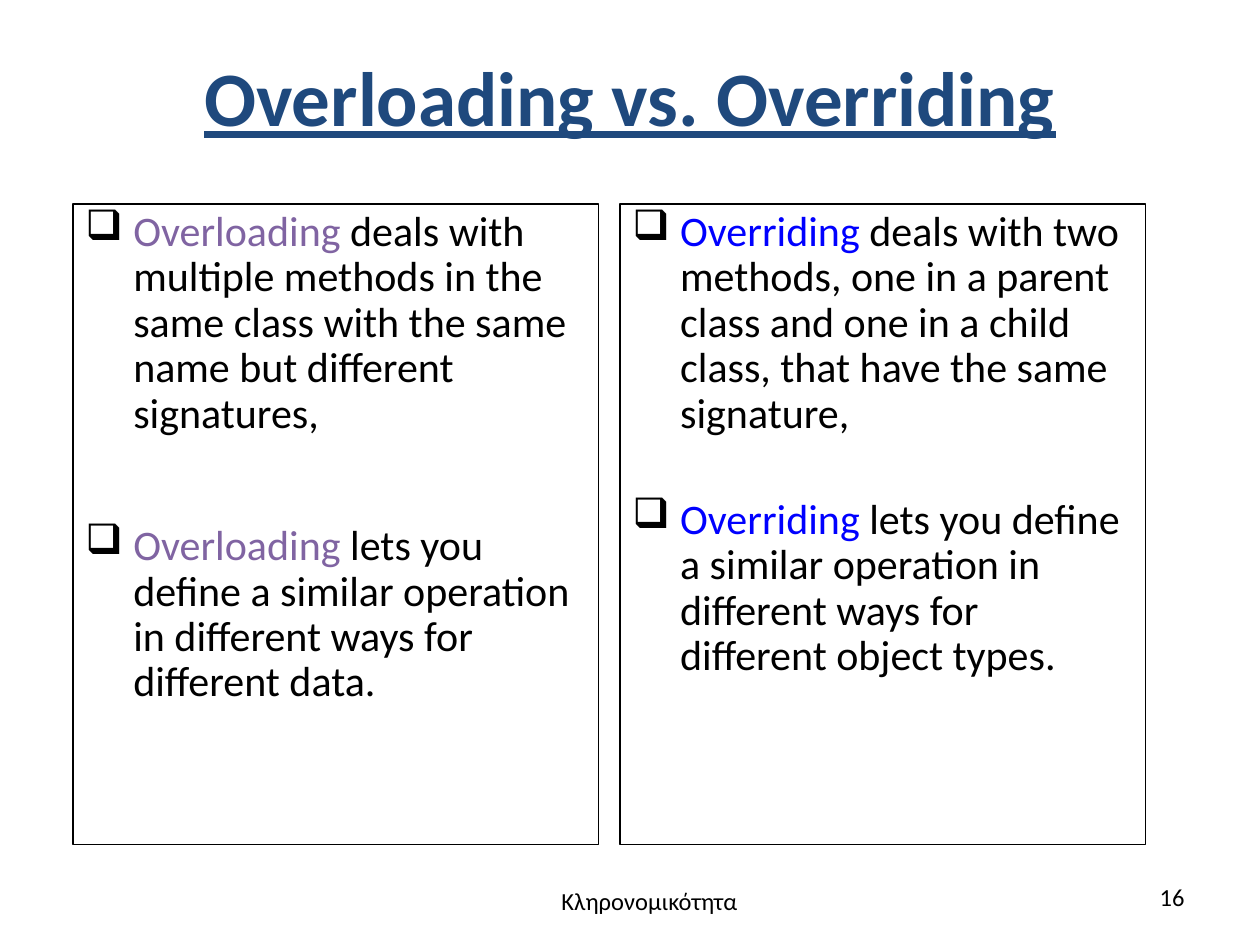
from lxml import etree
from pptx import Presentation
from pptx import util as u
from pptx.dml import color
from pptx.enum import shapes, text
from pptx.oxml import ns


def rgb(code):
    return color.RGBColor.from_string(code)


class Deck:
    font = "Calibri"
    ink = "000000"
    navy = "1F497D"

    def __init__(self):
        self.prs = Presentation()
        self.prs.slide_width = u.Inches(10)
        self.prs.slide_height = u.Inches(7.5)
        self.slide = self.prs.slides.add_slide(self.prs.slide_layouts[5])

    def run(self, para, words, size, shade=None):
        run = para.add_run()
        run.text = words
        run.font.name = self.font
        run.font.size = u.Pt(size)
        run.font.color.rgb = rgb(shade or self.ink)
        return run

    def title(self, words, box):
        shape = self.slide.shapes.title
        shape.left, shape.top, shape.width, shape.height = map(u.Inches, box)
        frame = shape.text_frame
        frame.vertical_anchor = text.MSO_ANCHOR.MIDDLE
        para = frame.paragraphs[0]
        para.alignment = text.PP_ALIGN.CENTER
        run = self.run(para, words, 44, self.navy)
        run.font.bold = True
        run.font.underline = True

    def bullet(self, para):
        props = para._p.get_or_add_pPr()
        props.set("marL", str(u.Inches(0.38)))
        props.set("indent", str(-u.Inches(0.38)))
        tint = etree.SubElement(props, ns.qn("a:buClr"))
        etree.SubElement(tint, ns.qn("a:srgbClr")).set("val", self.ink)
        etree.SubElement(props, ns.qn("a:buChar")).set("char", "❑")

    def panel(self, box, term, shade, points, gap):
        shape = self.slide.shapes.add_shape(
            shapes.MSO_SHAPE.RECTANGLE, *map(u.Inches, box))
        shape.shadow.inherit = False
        shape.fill.background()
        shape.line.color.rgb = rgb(self.ink)
        shape.line.width = u.Pt(0.75)
        frame = shape.text_frame
        frame.word_wrap = True
        frame.vertical_anchor = text.MSO_ANCHOR.TOP
        for i, point in enumerate(points):
            para = frame.add_paragraph() if i else frame.paragraphs[0]
            para.alignment = text.PP_ALIGN.LEFT
            para.line_spacing = 0.9
            para.space_before = u.Pt(gap if i else 0)
            self.bullet(para)
            self.run(para, term, 24, shade)
            self.run(para, " " + point, 24)

    def label(self, words, box, align):
        shape = self.slide.shapes.add_textbox(*map(u.Inches, box))
        frame = shape.text_frame
        frame.word_wrap = True
        para = frame.paragraphs[0]
        para.alignment = align
        self.run(para, words, 14)


def main():
    deck = Deck()
    deck.title("Overloading vs. Overriding", (0.5, 0.05, 9, 1.42))
    panels = [
        ("Overloading", "8064A2", 50, [
            "deals with multiple methods in the same class "
            "with the same name but different signatures,",
            "lets you define a similar operation "
            "in different ways for different data."]),
        ("Overriding", "0000FF", 35, [
            "deals with two methods, one in a parent class and one "
            "in a child class, that have the same signature,",
            "lets you define a similar operation "
            "in different ways for different object types."]),
    ]
    for i, (term, shade, gap, points) in enumerate(panels):
        box = (0.58 + i * 4.34, 1.62, 4.17, 5.08)
        deck.panel(box, term, shade, points, gap)
    deck.label("Κληρονομικότητα", (3.41, 6.98, 3.49, 0.55),
               text.PP_ALIGN.CENTER)
    deck.label("16", (7.17, 6.95, 2.33, 0.4), text.PP_ALIGN.RIGHT)
    deck.prs.save("out.pptx")


if __name__ == "__main__":
    main()
